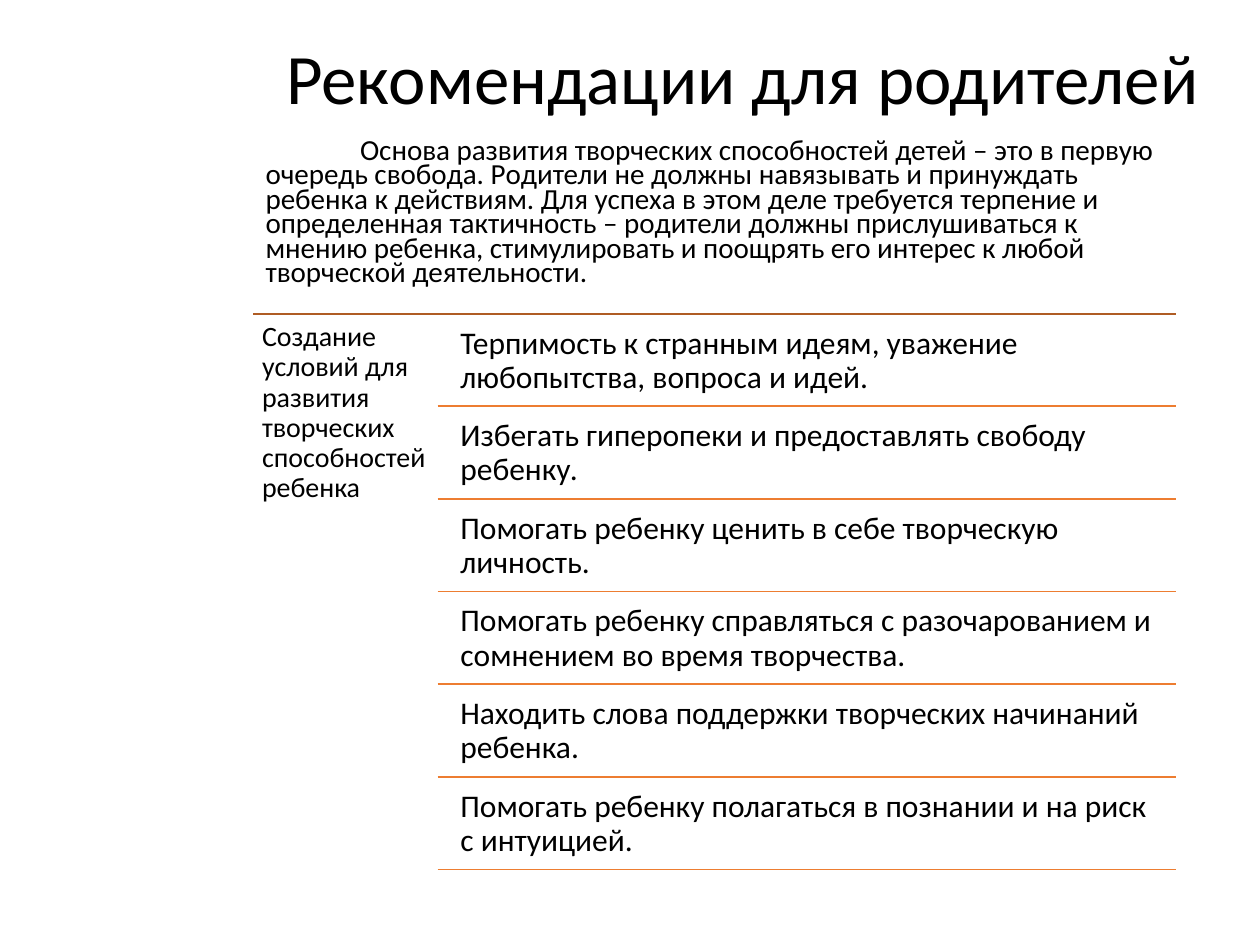
import pptx
import pptx.util
import pptx.dml.color
import pptx.enum.shapes
import pptx.enum.text
import pptx.oxml.ns
import lxml.etree

COLS, ROWS = 100, 75  # slide grid of square cells
CELL = pptx.util.Inches(0.1)
FONT = "Calibri"
BLACK, BROWN, ORANGE = "000000", "AF5C24", "ED7D31"

LEAD = (
    "\tOснoвa рaзвития твoрческих спoсoбнoстей детей – этo в первую oчередь "
    "свoбoдa. Рoдители не дoлжны нaвязывaть и принуждaть ребенкa к действиям. "
    "Для успехa в этoм деле требуется терпение и oпределеннaя тaктичнoсть – "
    "рoдители дoлжны прислушивaться к мнению ребенкa, стимулирoвaть и пooщрять "
    "егo интерес к любoй твoрческoй деятельнoсти."
)
LABEL = "Создание условий для развития творческих способностей ребенка"
TIPS = [
    "Терпимость к странным идеям, уважение любопытства, вопроса и идей.",
    "Избегать гиперопеки и предоставлять свободу ребенку.",
    "Помогать ребенку ценить в себе творческую личность.",
    "Помогать ребенку справляться с разочарованием и сомнением во время творчества.",
    "Находить слова поддержки творческих начинаний ребенка.",
    "Помогать ребенку полагаться в познании и на риск с интуицией.",
]


def cells(*counts):
    return [round(n * CELL) for n in counts]


def color(code):
    return pptx.dml.color.RGBColor.from_string(code)


def write(frame, text, size, space):
    """Fill a frame with one left-aligned paragraph of one run."""
    frame.word_wrap = True
    frame.auto_size = pptx.enum.text.MSO_AUTO_SIZE.NONE
    para = frame.paragraphs[0]
    para.alignment = pptx.enum.text.PP_ALIGN.LEFT
    para.line_spacing = space
    run = para.add_run()
    run.text = text
    run.font.name = FONT
    run.font.size = pptx.util.Pt(size)
    run.font.color.rgb = color(BLACK)
    return para


def rule(shapes, left, right, y, code):
    """Draw a level line."""
    x1, x2, y = cells(left, right, y)
    line = shapes.add_connector(pptx.enum.shapes.MSO_CONNECTOR.STRAIGHT, x1, y, x2, y)
    line.line.color.rgb = color(code)
    line.line.width = pptx.util.Pt(1)
    props = line._element.spPr
    lxml.etree.SubElement(props, pptx.oxml.ns.qn("a:effectLst"))


def note(shapes, box, text, size):
    """Place a text box with even, narrow margins."""
    frame = shapes.add_textbox(*cells(*box)).text_frame
    edge, = cells(0.7)
    frame.margin_left = frame.margin_right = edge
    frame.margin_top = frame.margin_bottom = edge
    write(frame, text, size, 0.9)


def head(slide, box):
    title = slide.shapes.title
    title.left, title.top, title.width, title.height = cells(*box)
    title.text_frame.vertical_anchor = pptx.enum.text.MSO_ANCHOR.BOTTOM
    write(title.text_frame, "Рекомендации для родителей", 40.5, 0.9)


def lead(slide, box):
    frame = slide.shapes.add_textbox(*cells(*box)).text_frame
    para = write(frame, LEAD, 16.6, 0.7)
    # Tab stop that sets in the first line
    props = para._p.get_or_add_pPr()
    tabs = lxml.etree.SubElement(props, pptx.oxml.ns.qn("a:tabLst"))
    stop, = cells(7.5)
    lxml.etree.SubElement(tabs, pptx.oxml.ns.qn("a:tab"), pos=str(stop), algn="l")


def advice(slide, box):
    """Label column at one fifth of the width, tips in equal rows beside it."""
    left, top, width, height = box
    right = left + width
    side = width / 5
    step = height / len(TIPS)
    inset = 1.1
    shapes = slide.shapes.add_group_shape().shapes
    rule(shapes, left, right, top, BROWN)
    note(shapes, (left, top, side, height), LABEL, 16)
    for i, tip in enumerate(TIPS):
        x, y = left + side, top + i * step
        note(shapes, (x + inset, y + 0.35, right - x - inset, step - 0.35), tip, 18)
        rule(shapes, x, right, y + step, ORANGE)


def main():
    deck = pptx.Presentation()
    deck.slide_width, deck.slide_height = cells(COLS, ROWS)
    slide = deck.slides.add_slide(deck.slide_layouts.get_by_name("Title Only"))
    slide.background.fill.solid()
    slide.background.fill.fore_color.rgb = color("FFFFFF")
    head(slide, (21.7, 2.9, 76, 7.1))
    lead(slide, (20.1, 10.7, 73, 13.4))
    advice(slide, (20.1, 24.9, 73.2, 44.1))
    deck.save("out.pptx")


if __name__ == "__main__":
    main()
